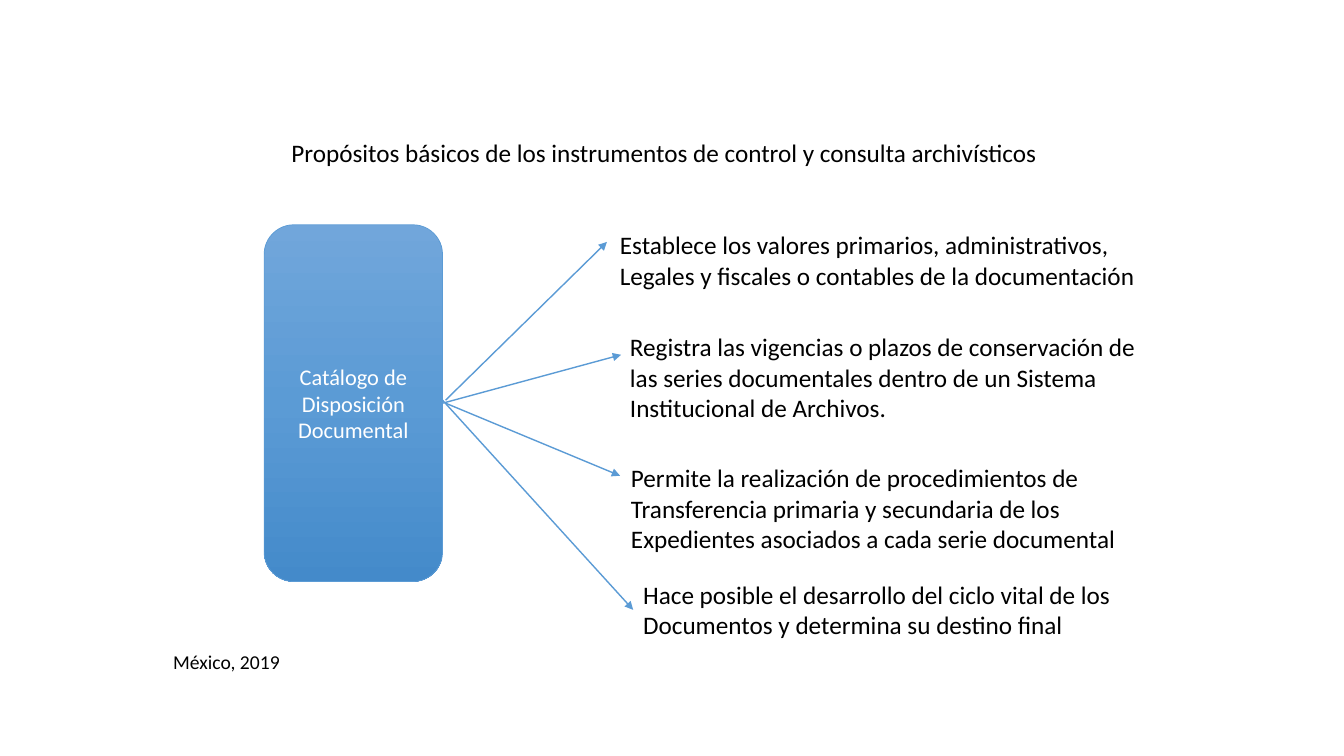
"""Build a slide on the purposes of the archival disposition catalogue."""
from copy import deepcopy

from pptx import Presentation
from pptx.dml.color import RGBColor
from pptx.enum.shapes import MSO_CONNECTOR, MSO_SHAPE
from pptx.enum.text import MSO_ANCHOR, MSO_AUTO_SIZE, PP_ALIGN
from pptx.oxml.ns import qn
from pptx.util import Pt
from lxml.etree import SubElement

PX = 9144
BLUE = "5B9BD5"


def tint(color, code):
    color.rgb = RGBColor.from_string(code)


def write(shape, lines, size, code="000000", align=PP_ALIGN.LEFT,
          anchor=MSO_ANCHOR.TOP, wrap=False, fit=MSO_AUTO_SIZE.SHAPE_TO_FIT_TEXT):
    frame = shape.text_frame
    frame.word_wrap = wrap
    frame.auto_size = fit
    frame.vertical_anchor = anchor
    for i, line in enumerate(lines):
        para = frame.add_paragraph() if i else frame.paragraphs[0]
        para.alignment = align
        run = para.add_run()
        run.text = line
        run.font.name = "Calibri"
        run.font.size = Pt(size)
        tint(run.font.color, code)


deck = Presentation()
deck.slide_width, deck.slide_height = 1333 * PX, 750 * PX
slide = deck.slides.add_slide(deck.slide_layouts[5])
shapes = slide.shapes

title = shapes.title
title.left, title.top, title.width, title.height = [n * PX for n in (279, 131, 768, 40)]
write(title, ["Propósitos básicos de los instrumentos de control y consulta archivísticos"], 18)

card = shapes.add_shape(MSO_SHAPE.ROUNDED_RECTANGLE, *[n * PX for n in (262, 223, 177, 354)])
card.shadow.inherit = False
card.fill.gradient()
card.fill.gradient_angle = 270
stops = card._element.spPr.find(".//" + qn("a:gsLst"))
stops.insert(1, deepcopy(stops[0]))
for stop, place, code in zip(card.fill.gradient_stops, (0, 0.5, 1), ("71A6DB", BLUE, "448ACA")):
    stop.position = place
    tint(stop.color, code)
tint(card.line.color, BLUE)
card.line.width = Pt(0.5)
write(card, ["Catálogo de Disposición Documental"], 16, "FFFFFF", PP_ALIGN.CENTER,
      MSO_ANCHOR.MIDDLE, True, MSO_AUTO_SIZE.NONE)

goals = [
    ((442, 397, 602, 240), (605, 223, 537, 71),
     ["Establece los valores primarios, administrativos,",
      "Legales y fiscales o contables de la documentación"]),
    ((439, 400, 616, 352), (615, 324, 527, 101),
     ["Registra las vigencias o plazos de conservación de",
      "las series documentales dentro de un Sistema",
      "Institucional de Archivos."]),
    ((442, 400, 615, 472), (616, 454, 506, 101),
     ["Permite la realización de procedimientos de",
      "Transferencia primaria y secundaria de los",
      "Expedientes asociados a cada serie documental"]),
    ((438, 396, 628, 605), (628, 570, 489, 71),
     ["Hace posible el desarrollo del ciclo vital de los",
      "Documentos y determina su destino final"]),
]
for ends, area, lines in goals:
    arrow = shapes.add_connector(MSO_CONNECTOR.STRAIGHT, *[n * PX for n in ends])
    tint(arrow.line.color, BLUE)
    arrow.line.width = Pt(1)
    SubElement(arrow.line._get_or_add_ln(), qn("a:tailEnd"), type="triangle")
    SubElement(arrow._element.spPr, qn("a:effectLst"))
    write(shapes.add_textbox(*[n * PX for n in area]), lines, 18)

place = shapes.add_textbox(*[n * PX for n in (162, 640, 234, 34)])
write(place, ["México, 2019"], 14, wrap=True)

deck.save("out.pptx")
